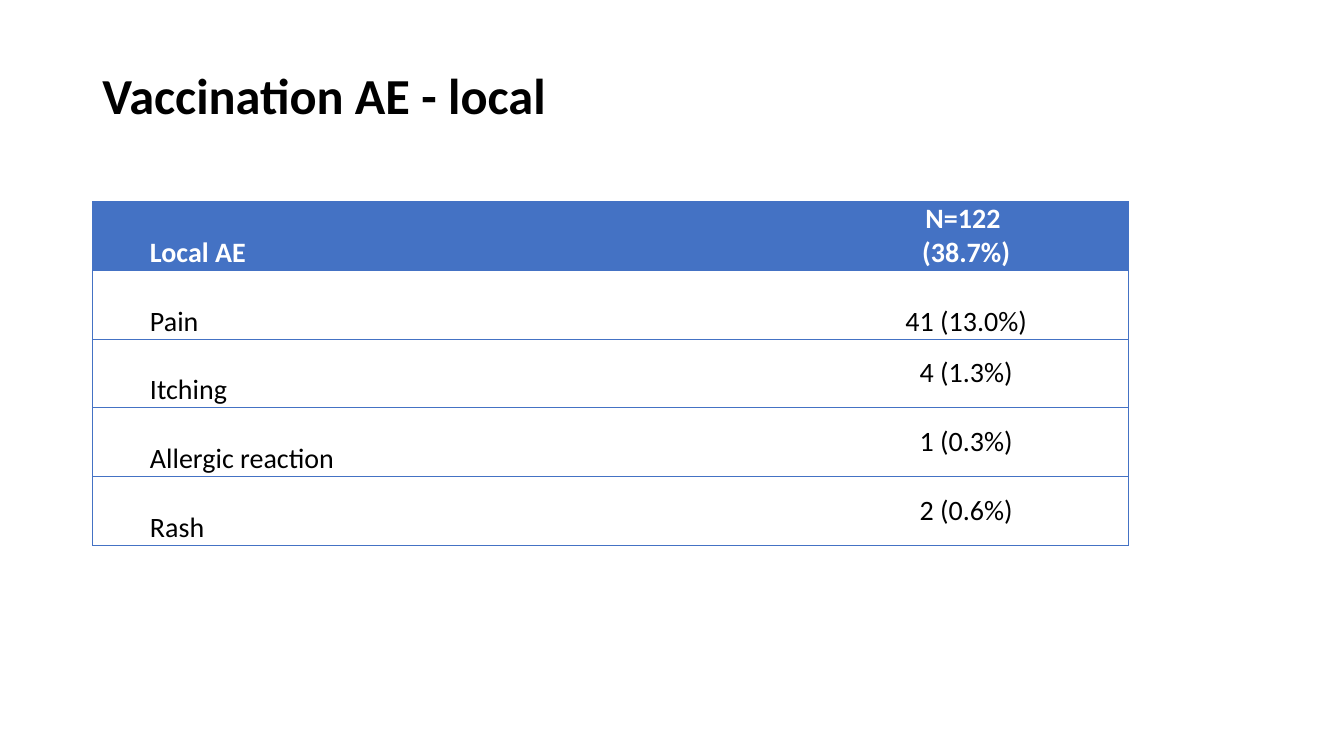
from dataclasses import dataclass

from lxml.etree import SubElement
from pptx import Presentation
from pptx.dml.color import RGBColor
from pptx.enum.text import MSO_ANCHOR, PP_ALIGN
from pptx.oxml.ns import qn
from pptx.util import Cm, Pt


@dataclass(frozen=True)
class Theme:
    font: str = "Calibri"
    text: str = "000000"
    header_text: str = "FFFFFF"
    accent: str = "4472C4"
    title_size: int = 36
    table_size: int = 20
    border_width: float = 0.5


class SlideBuilder:
    def __init__(self, slide, theme):
        self.slide = slide
        self.theme = theme

    def style_runs(self, paragraph, size, color, bold):
        for run in paragraph.runs:
            run.font.name = self.theme.font
            run.font.size = Pt(size)
            run.font.bold = bold
            run.font.color.rgb = RGBColor.from_string(color)

    def title(self, text, left, top, width, height):
        frame = self.slide.shapes.add_textbox(left, top, width, height).text_frame
        frame.word_wrap = True
        frame.vertical_anchor = MSO_ANCHOR.MIDDLE
        frame.text = text
        heading = frame.paragraphs[0]
        heading.line_spacing = 0.9
        self.style_runs(heading, self.theme.title_size, self.theme.text, True)

    def border(self, cell, side, visible):
        """Draw or suppress one side (L, R, T or B); call before filling the cell."""
        line = SubElement(cell._tc.get_or_add_tcPr(), qn(f"a:ln{side}"),
                          w=str(Pt(self.theme.border_width)))
        if visible:
            fill = SubElement(line, qn("a:solidFill"))
            SubElement(fill, qn("a:srgbClr"), val=self.theme.accent)
        else:
            SubElement(line, qn("a:noFill"))

    def cell(self, cell, text, is_header, is_label, anchor):
        cell.margin_left = cell.margin_right = Cm(0.18)
        cell.margin_top = cell.margin_bottom = 0
        cell.vertical_anchor = anchor
        for side, visible in (("L", is_label), ("R", not is_label), ("T", True), ("B", True)):
            self.border(cell, side, visible)
        if is_header:
            cell.fill.solid()
            cell.fill.fore_color.rgb = RGBColor.from_string(self.theme.accent)
        else:
            cell.fill.background()
        cell.text_frame.text = text
        color = self.theme.header_text if is_header else self.theme.text
        for paragraph in cell.text_frame.paragraphs:
            paragraph.alignment = PP_ALIGN.LEFT if is_label else PP_ALIGN.CENTER
            paragraph._p.get_or_add_pPr().set("marL", str(Cm(1.27)))
            self.style_runs(paragraph, self.theme.table_size, color, is_header)

    def table(self, rows, left, top, column_widths, row_height, low_values):
        """Place a label/value table; values of the rows in low_values sit at the bottom."""
        table = self.slide.shapes.add_table(
            len(rows), len(column_widths), left, top,
            sum(column_widths), row_height * len(rows)).table
        table.horz_banding = False
        for column, width in zip(table.columns, column_widths):
            column.width = width
        for row_index, texts in enumerate(rows):
            table.rows[row_index].height = row_height
            for column_index, text in enumerate(texts):
                is_label = column_index == 0
                at_bottom = is_label or row_index in low_values
                self.cell(table.cell(row_index, column_index), text, row_index == 0, is_label,
                          MSO_ANCHOR.BOTTOM if at_bottom else MSO_ANCHOR.MIDDLE)


def main():
    presentation = Presentation()
    presentation.slide_width = Cm(33.87)
    presentation.slide_height = Cm(19.05)
    slide = presentation.slides.add_slide(presentation.slide_layouts[6])
    builder = SlideBuilder(slide, Theme())

    builder.title("Vaccination AE - local", Cm(2.33), Cm(1.01), Cm(29.21), Cm(2.95))
    local_events = [
        ("Local ΑΕ", "Ν=122 \n(38.7%)"),
        ("Pain", "41 (13.0%)"),
        ("Itching", "4 (1.3%)"),
        ("Allergic reaction", "1 (0.3%)"),
        ("Rash", "2 (0.6%)"),
    ]
    builder.table(local_events, Cm(2.33), Cm(5.08), (Cm(16.66), Cm(9.45)), Cm(1.73),
                  low_values={1})
    presentation.save("out.pptx")


if __name__ == "__main__":
    main()
